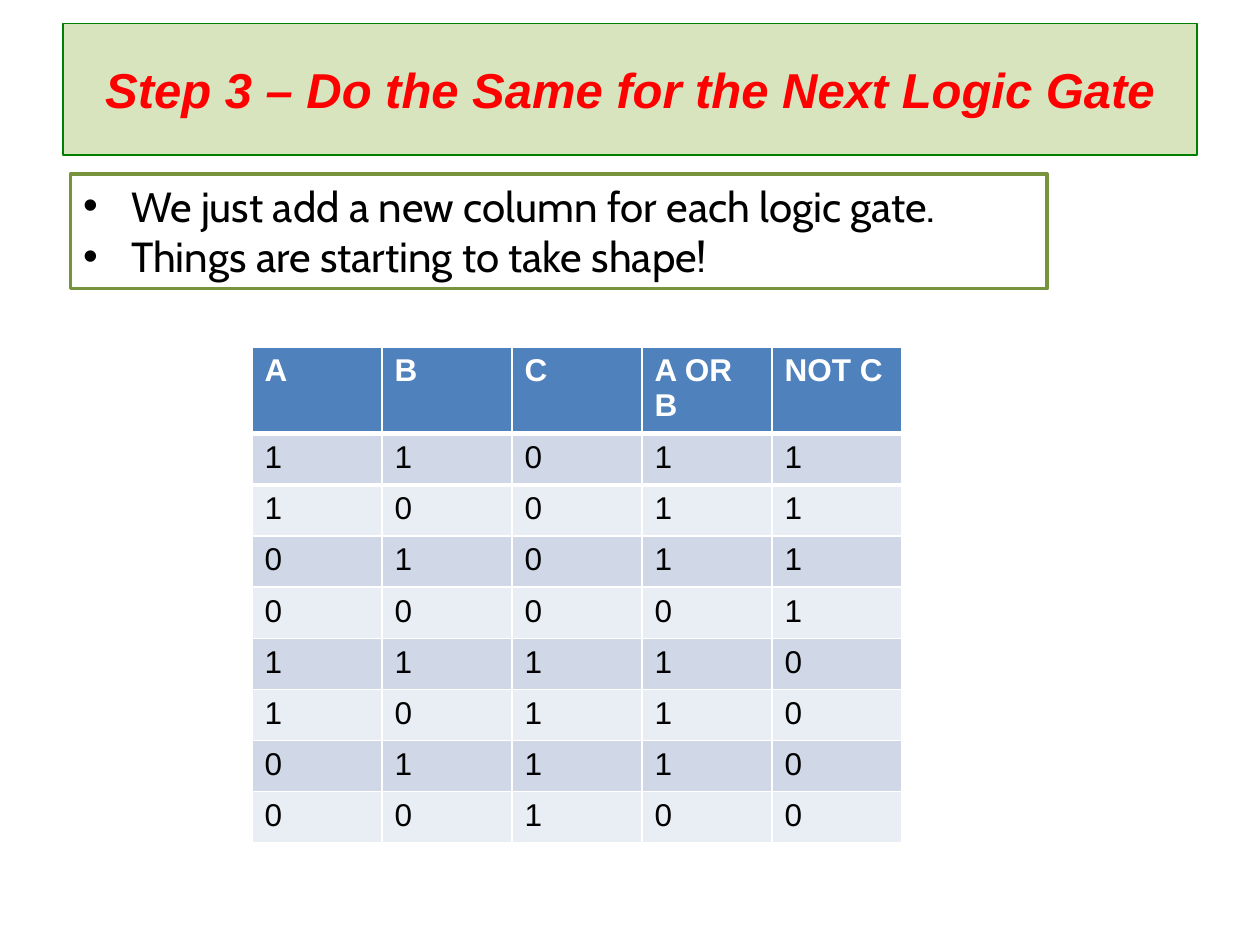
"""Build a slide with a truth table that gains a column for each logic gate."""
from lxml.etree import SubElement
from pptx import Presentation
from pptx.dml.color import RGBColor
from pptx.enum.text import MSO_ANCHOR, MSO_AUTO_SIZE, PP_ALIGN
from pptx.oxml.ns import qn
from pptx.util import Inches, Pt

TITLE = "Step 3 – Do the Same for the Next Logic Gate"
POINTS = [
    "We just add a new column for each logic gate.",
    "Things are starting to take shape!",
]
HEADS = ["A", "B", "C", "A OR B", "NOT C"]
ROWS = ["11011", "10011", "01011", "00001", "11110", "10110", "01110", "00100"]

THEME = {
    "panel": "D7E4BD", "edge": "008000", "frame": "77933C", "rule": "FFFFFF",
    "head": "4F81BD", "bands": ["D0D8E8", "E9EDF4"],
    "title": dict(name="Arial", size=28, bold=True, italic=True, color="FF0000"),
    "point": dict(name="Cabin", size=24, bold=False, color="000000"),
    "label": dict(name="Arial", size=18, bold=True, color="FFFFFF"),
    "value": dict(name="Arial", size=18, bold=False, color="000000"),
}
WIDE, HIGH = 10, 7.5
HEAD, HANG = 0.69, 0.38
PERCENT = {
    "title": (5, 2.5, 90, 13.9),
    "points": (5.6, 18.4, 77.5, 12.15),
    "table": (20, 36.7, 51.6, 52.5),
}


def place(key):
    """Turn percents of the slide into lengths."""
    sides = (WIDE, HIGH) * 2
    return [Inches(part * side / 100) for part, side in zip(PERCENT[key], sides)]


def move(shape, key):
    """Put a shape in its box."""
    for name, size in zip(("left", "top", "width", "height"), place(key)):
        setattr(shape, name, size)


def style(font, key):
    """Apply a text format from the theme."""
    for name, value in THEME[key].items():
        if name == "color":
            font.color.rgb = RGBColor.from_string(value)
        else:
            setattr(font, name, Pt(value) if name == "size" else value)


def paint(fill, color):
    """Fill with one colour."""
    fill.solid()
    fill.fore_color.rgb = RGBColor.from_string(color)


def outline(shape, color, width):
    """Draw the edge of a shape."""
    shape.line.color.rgb = RGBColor.from_string(color)
    shape.line.width = Pt(width)


def rule(cell, side):
    """Draw the thick line between the labels and the values."""
    props = cell._tc.get_or_add_tcPr()
    line = SubElement(props, qn(f"a:{side}"), w=str(Pt(3)))
    solid = SubElement(line, qn("a:solidFill"))
    SubElement(solid, qn("a:srgbClr"), val=THEME["rule"])
    props.insert(0, line)


def add_title(slide):
    """Fill the title panel."""
    shape = slide.shapes.title
    move(shape, "title")
    paint(shape.fill, THEME["panel"])
    outline(shape, THEME["edge"], 0.75)
    frame = shape.text_frame
    frame.text = TITLE
    frame.auto_size = MSO_AUTO_SIZE.NONE
    frame.vertical_anchor = MSO_ANCHOR.MIDDLE
    para = frame.paragraphs[0]
    para.alignment = PP_ALIGN.CENTER
    style(para.runs[0].font, "title")


def add_points(slide):
    """Fill the framed list."""
    shape = slide.placeholders[1]
    move(shape, "points")
    outline(shape, THEME["frame"], 2)
    frame = shape.text_frame
    frame.text = "\n".join(POINTS)
    frame.word_wrap = True
    frame.auto_size = MSO_AUTO_SIZE.NONE
    for para in frame.paragraphs:
        props = para._p.get_or_add_pPr()
        props.set("marL", str(Inches(HANG)))
        props.set("indent", str(-Inches(HANG)))
        para.space_before = Pt(0)
        style(para.runs[0].font, "point")


def add_grid(slide):
    """Draw the truth table."""
    lines = [HEADS, *ROWS]
    box = place("table")
    table = slide.shapes.add_table(len(lines), len(HEADS), *box).table
    step = (box[3] - Inches(HEAD)) // len(ROWS)
    for i, line in enumerate(lines):
        table.rows[i].height = step if i else Inches(HEAD)
        color = THEME["bands"][(i - 1) % 2] if i else THEME["head"]
        for j, text in enumerate(line):
            cell = table.cell(i, j)
            cell.text = text
            paint(cell.fill, color)
            style(cell.text_frame.paragraphs[0].runs[0].font, "value" if i else "label")
            if i < 2:
                rule(cell, "lnT" if i else "lnB")


def main():
    """Build and save the slide."""
    deck = Presentation()
    deck.slide_width, deck.slide_height = Inches(WIDE), Inches(HIGH)
    slide = deck.slides.add_slide(deck.slide_layouts[1])
    add_title(slide)
    add_points(slide)
    add_grid(slide)
    deck.save("out.pptx")


if __name__ == "__main__":
    main()
